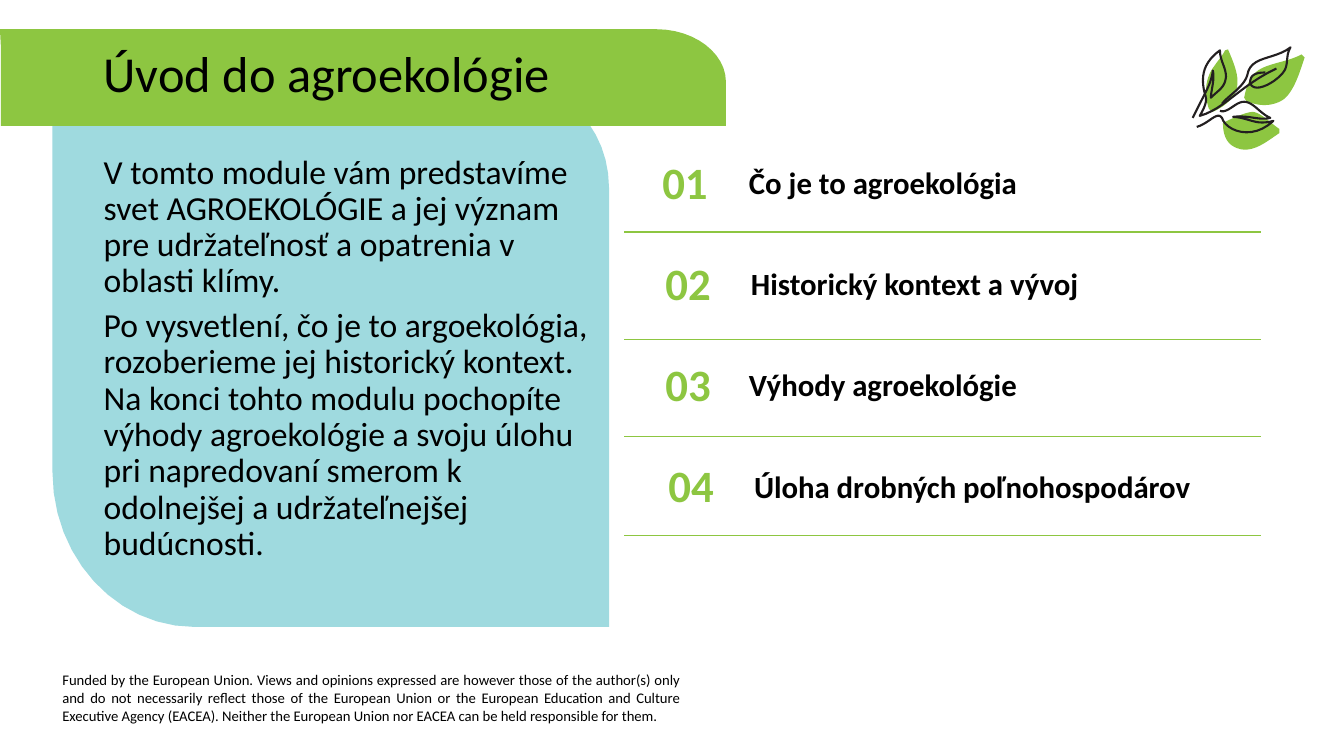
from dataclasses import dataclass

from lxml.etree import SubElement
from pptx import Presentation
from pptx.dml.color import RGBColor
from pptx.enum.shapes import MSO_CONNECTOR
from pptx.enum.text import MSO_ANCHOR, PP_ALIGN
from pptx.oxml.ns import qn
from pptx.slide import Slide
from pptx.util import Inches, Pt

Points = tuple[tuple[float, ...], ...]


@dataclass(frozen=True)
class Theme:
    """Colours, typeface and type sizes."""

    green: RGBColor = RGBColor.from_string("8DC641")
    aqua: RGBColor = RGBColor.from_string("9FDADF")
    ink: RGBColor = RGBColor.from_string("231F20")
    black: RGBColor = RGBColor.from_string("000000")
    font: str = "Calibri"
    title: float = 36
    number: float = 32
    body: float = 24
    topic: float = 22
    footer: float = 10.5
    rule: float = 1
    sketch: float = 1.5


@dataclass(frozen=True)
class Box:
    """A rectangle in inches."""

    left: float
    top: float
    width: float
    height: float


@dataclass(frozen=True)
class Outline:
    """A start point, then lines of two numbers or curves of six."""

    points: Points
    color: RGBColor
    filled: bool = True


@dataclass(frozen=True)
class Topic:
    """A numbered topic with its column positions."""

    title: str
    number_left: float
    title_left: float
    top: float


THEME = Theme()

PANEL = Outline(
    ((6.04, 6.22), (1.93, 6.22), (1.15, 6.22, 0.52, 5.53, 0.52, 4.68), (0.52, 0.82),
     (5.08, 0.82), (5.61, 0.82, 6.04, 1.29, 6.04, 1.86)), THEME.aqua)
BAND = Outline(
    ((0, 0.29), (6.51, 0.29), (6.89, 0.29, 7.2, 0.53, 7.2, 0.81), (7.2, 1.25),
     (0.01, 1.25), (0.01, 0.48)), THEME.green)
LEAVES = (
    ((12.05, 1.1), (12.15, 1.05, 12.25, 0.97, 12.27, 0.86),
     (12.29, 0.74, 12.23, 0.61, 12.18, 0.49), (12.15, 0.5), (12.12, 0.56, 12.08, 0.6, 12.04, 0.66),
     (11.94, 0.79, 11.95, 0.96, 11.99, 1.08), (12.02, 1.11)),
    ((12.74, 0.98), (12.84, 0.89, 12.89, 0.72, 12.94, 0.57), (12.91, 0.54),
     (12.78, 0.61, 12.63, 0.62, 12.51, 0.68), (12.39, 0.74, 12.36, 0.87, 12.34, 0.97),
     (12.36, 1), (12.48, 1.06, 12.63, 1.06, 12.74, 0.98)),
    ((12.69, 1.32), (12.69, 1.28), (12.6, 1.22, 12.5, 1.11, 12.42, 1.11),
     (12.34, 1.12, 12.26, 1.16, 12.19, 1.19), (12.13, 1.22),
     (12.13, 1.33, 12.16, 1.43, 12.27, 1.47), (12.42, 1.53, 12.57, 1.4, 12.69, 1.32)),
)
STROKES = (
    ((11.95, 0.93), (11.9, 0.74, 11.95, 0.61, 12.1, 0.5), (12.1, 0.6, 12.16, 0.67, 12.16, 0.76),
     (12.15, 0.87, 12.09, 0.89, 12.01, 0.97), (12.01, 0.9, 12.05, 0.8, 12.03, 0.7),
     (12.01, 0.85, 11.95, 0.92, 11.83, 1.17)),
    ((11.95, 0.93), (11.98, 1, 11.95, 1.06, 11.9, 1.15), (12.15, 1.08, 12.3, 0.85, 12.66, 0.68)),
    ((12.12, 1.03), (12.18, 0.95, 12.33, 0.87, 12.37, 0.75), (12.4, 0.55, 12.63, 0.6, 12.8, 0.47),
     (12.75, 0.55, 12.78, 0.63, 12.74, 0.7), (12.68, 0.8, 12.45, 0.94, 12.4, 0.83),
     (12.39, 0.73, 12.48, 0.72, 12.55, 0.72)),
    ((11.87, 1.26), (12, 1.22, 12.07, 1.1, 12.12, 1.17), (12.16, 1.3, 12.42, 1.4, 12.63, 1.2),
     (12.45, 1.25, 12.4, 1.17, 12.23, 1.16), (12.38, 1.14, 12.5, 1.2, 12.6, 1.17),
     (12.5, 1.13, 12.43, 1.01, 12.34, 1.01), (12.25, 1.01, 12.18, 1.13, 12.1, 1.1)),
)
RULE_TOPS = (2.3, 3.37, 4.33, 5.31)
TOPICS = (
    Topic("Čo je to agroekológia", 6.41, 7.33, 1.46),
    Topic("Historický kontext a vývoj", 6.44, 7.35, 2.46),
    Topic("Výhody agroekológie", 6.44, 7.33, 3.46),
    Topic("Úloha drobných poľnohospodárov", 6.47, 7.38, 4.47),
)
TITLE = "Úvod do agroekológie"
INTRODUCTION = (
    "V tomto module vám predstavíme svet AGROEKOLÓGIE a jej význam pre udržateľnosť "
    "a opatrenia v oblasti klímy.",
    "Po vysvetlení, čo je to argoekológia, rozoberieme jej historický kontext. Na konci tohto "
    "modulu pochopíte výhody agroekológie a svoju úlohu pri napredovaní smerom k odolnejšej "
    "a udržateľnejšej budúcnosti.",
)
FOOTER = (
    "Funded by the European Union. Views and opinions expressed are however those of the "
    "author(s) only and do not necessarily reflect those of the European Union or the European "
    "Education and Culture Executive Agency (EACEA). Neither the European Union nor EACEA can "
    "be held responsible for them."
)


def flatten(points: Points, steps: int = 12) -> list[tuple[int, int]]:
    """Turn lines and cubic curves into vertices."""
    vertices = [points[0]]
    for segment in points[1:]:
        if len(segment) == 2:
            vertices.append(segment)
            continue
        controls = (vertices[-1], segment[:2], segment[2:4], segment[4:])
        for step in range(1, steps + 1):
            t = step / steps
            weights = ((1 - t) ** 3, 3 * t * (1 - t) ** 2, 3 * t * t * (1 - t), t ** 3)
            vertices.append(tuple(
                sum(weight * control[axis] for weight, control in zip(weights, controls))
                for axis in (0, 1)))
    return [(Inches(x), Inches(y)) for x, y in vertices]


def draw_outline(slide: Slide, outline: Outline) -> None:
    """Draw a filled outline or an open stroke."""
    start, *vertices = flatten(outline.points)
    builder = slide.shapes.build_freeform(*start)
    builder.add_line_segments(vertices, close=outline.filled)
    shape = builder.convert_to_shape()
    shape.shadow.inherit = False
    if outline.filled:
        shape.fill.solid()
        shape.fill.fore_color.rgb = outline.color
        shape.line.fill.background()
    else:
        shape.fill.background()
        shape.line.color.rgb = outline.color
        shape.line.width = Pt(THEME.sketch)


def draw_rule(slide: Slide, top: float) -> None:
    """Draw a horizontal rule below a topic."""
    rule = slide.shapes.add_connector(
        MSO_CONNECTOR.STRAIGHT, Inches(6.19), Inches(top), Inches(12.51), Inches(top))
    rule.line.color.rgb = THEME.green
    rule.line.width = Pt(THEME.rule)
    SubElement(rule.element.spPr, qn("a:effectLst"))


def add_text(slide: Slide, box: Box, *texts: str, size: float, color: RGBColor = THEME.black,
             bold: bool = False, align: PP_ALIGN = PP_ALIGN.LEFT,
             anchor: MSO_ANCHOR = MSO_ANCHOR.MIDDLE, line_spacing: float = 0.9) -> None:
    """Add a text box with one paragraph for each text."""
    shape = slide.shapes.add_textbox(
        Inches(box.left), Inches(box.top), Inches(box.width), Inches(box.height))
    frame = shape.text_frame
    frame.word_wrap = True
    frame.vertical_anchor = anchor
    for index, text in enumerate(texts):
        paragraph = frame.add_paragraph() if index else frame.paragraphs[0]
        paragraph.text = text
        paragraph.alignment = align
        paragraph.line_spacing = line_spacing
        paragraph.space_before = Pt(6 if index else 0)
        paragraph.font.name = THEME.font
        paragraph.font.size = Pt(size)
        paragraph.font.bold = bold
        paragraph.font.color.rgb = color


def main() -> None:
    """Build and save the slide."""
    presentation = Presentation()
    presentation.slide_width, presentation.slide_height = Inches(13.33), Inches(7.5)
    slide = presentation.slides.add_slide(presentation.slide_layouts[6])
    leaves = [Outline(points, THEME.green) for points in LEAVES]
    strokes = [Outline(points, THEME.ink, filled=False) for points in STROKES]
    for outline in (PANEL, BAND, *leaves, *strokes):
        draw_outline(slide, outline)
    for top in RULE_TOPS:
        draw_rule(slide, top)
    add_text(slide, Box(0.93, 0.36, 6.45, 0.79), TITLE, size=THEME.title)
    add_text(slide, Box(0.93, 1.49, 5.02, 4.36), *INTRODUCTION, size=THEME.body,
             anchor=MSO_ANCHOR.TOP)
    for number, topic in enumerate(TOPICS, start=1):
        add_text(slide, Box(topic.number_left, topic.top, 0.77, 0.75), f"{number:02}",
                 size=THEME.number, color=THEME.green, bold=True, align=PP_ALIGN.CENTER)
        add_text(slide, Box(topic.title_left, topic.top, 4.88, 0.75), topic.title,
                 size=THEME.topic, bold=True)
    add_text(slide, Box(0.52, 6.61, 6.33, 0.66), FOOTER, size=THEME.footer,
             align=PP_ALIGN.JUSTIFY, anchor=MSO_ANCHOR.TOP, line_spacing=1.0)
    presentation.save("out.pptx")


if __name__ == "__main__":
    main()
